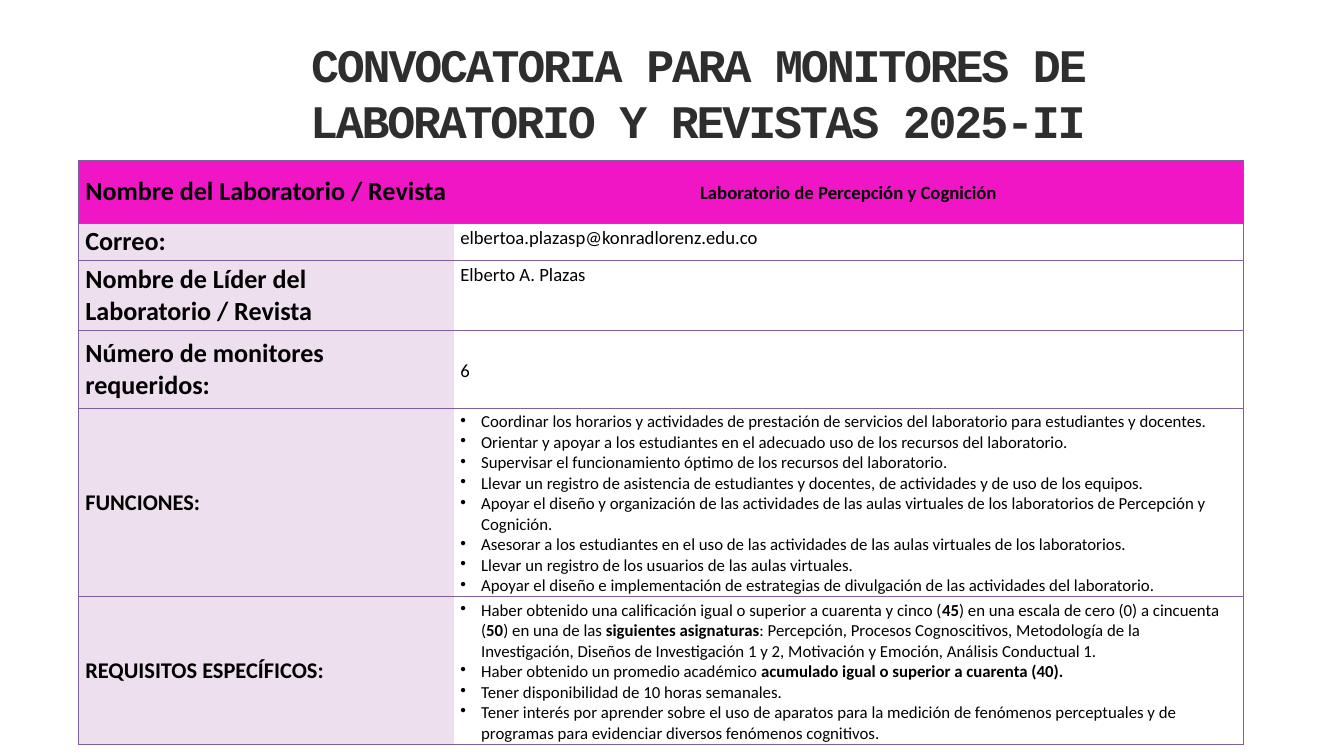
"""Build the call-for-monitors slide with its table of requirements."""
from lxml import etree
from pptx import Presentation
from pptx.dml.color import RGBColor
from pptx.enum.text import MSO_ANCHOR, PP_ALIGN
from pptx.oxml.ns import qn
from pptx.util import Inches, Pt

PINK = RGBColor(0xF0, 0x16, 0xC6)
LILAC = RGBColor(0xED, 0xDF, 0xED)
PURPLE = RGBColor(0x7D, 0x60, 0xA0)
BLACK = RGBColor(0, 0, 0)
GRAY = RGBColor(0x2E, 0x2E, 0x2E)

TITLE = "CONVOCATORIA PARA MONITORES DE LABORATORIO Y REVISTAS 2025-II"
TASKS = [
    "Coordinar los horarios y actividades de prestación de servicios del laboratorio para estudiantes y docentes.",
    "Orientar y apoyar a los estudiantes en el adecuado uso de los recursos del laboratorio.",
    "Supervisar el funcionamiento óptimo de los recursos del laboratorio.",
    "Llevar un registro de asistencia de estudiantes y docentes, de actividades y de uso de los equipos.",
    "Apoyar el diseño y organización de las actividades de las aulas virtuales de los laboratorios de Percepción y Cognición.",
    "Asesorar a los estudiantes en el uso de las actividades de las aulas virtuales de los laboratorios.",
    "Llevar un registro de los usuarios de las aulas virtuales.",
    "Apoyar el diseño e implementación de estrategias de divulgación de las actividades del laboratorio.",
]
# Text between bars is bold.
NEEDS = [
    "Haber obtenido una calificación igual o superior a cuarenta y cinco (|45|) en una escala de cero (0) a cincuenta (|50|) en una de las |siguientes asignaturas|: Percepción, Procesos Cognoscitivos, Metodología de la Investigación, Diseños de Investigación 1 y 2, Motivación y Emoción, Análisis Conductual 1.",
    "Haber obtenido un promedio académico |acumulado igual o superior a cuarenta (40).|",
    "Tener disponibilidad de 10 horas semanales.",
    "Tener interés por aprender sobre el uso de aparatos para la medición de fenómenos perceptuales y de programas para evidenciar diversos fenómenos cognitivos.",
]
ROWS = [
    (0.94, "Nombre del Laboratorio / Revista", 28, ["|Laboratorio de Percepción y Cognición|"]),
    (0.56, "Correo:", 28, ["elbertoa.plazasp@konradlorenz.edu.co"]),
    (1.04, "Nombre de Líder del Laboratorio / Revista", 28, ["Elberto A. Plazas"]),
    (1.16, "Número de monitores requeridos:", 28, ["6"]),
    (2.8, "FUNCIONES:", 24, TASKS),
    (2.2, "REQUISITOS ESPECÍFICOS:", 24, NEEDS),
]
COLS = (5.58, 11.75)


def style(para, size, color=BLACK, name="Calibri", bold=False):
    font = para.font
    font.size, font.name, font.bold = Pt(size), name, bold
    font.color.rgb = color


def bullet(para):
    props = para._p.get_or_add_pPr()
    props.set("marL", str(Inches(0.31)))
    props.set("indent", str(-Inches(0.31)))
    etree.SubElement(props, qn("a:buChar")).set("char", "•")


def border(cell, inner):
    props = cell._tc.get_or_add_tcPr()
    for pos, side in enumerate("LRTB"):
        line = etree.Element(qn("a:ln" + side), w=str(Pt(0.75)))
        if side == inner:
            etree.SubElement(line, qn("a:noFill"))
        else:
            fill = etree.SubElement(line, qn("a:solidFill"))
            etree.SubElement(fill, qn("a:srgbClr"), val=str(PURPLE))
        props.insert(pos, line)


def write(cell, lines, size, bold=False):
    frame = cell.text_frame
    for num, line in enumerate(lines):
        para = frame.add_paragraph() if num else frame.paragraphs[0]
        if len(lines) > 1:
            bullet(para)
        style(para, size, bold=bold)
        for pos, part in enumerate(line.split("|")):
            if part:
                run = para.add_run()
                run.text = part
                if pos % 2:
                    run.font.bold = True


def paint(cell, color):
    if color is None:
        cell.fill.background()
    else:
        cell.fill.solid()
        cell.fill.fore_color.rgb = color


def main():
    deck = Presentation()
    deck.slide_width, deck.slide_height = Inches(20), Inches(11.25)
    slide = deck.slides.add_slide(deck.slide_layouts[6])

    box = slide.shapes.add_textbox(Inches(3.16), Inches(0.53), Inches(14.45), Inches(2.52))
    frame = box.text_frame
    frame.word_wrap = True
    frame.margin_left = frame.margin_right = frame.margin_top = frame.margin_bottom = 0
    para = frame.paragraphs[0]
    para.alignment, para.line_spacing = PP_ALIGN.CENTER, Pt(60.1)
    style(para, 50, GRAY, "Courier New", True)
    run = para.add_run()
    run.text = TITLE
    run._r.get_or_add_rPr().set("spc", "-240")

    high = sum(row[0] for row in ROWS)
    table = slide.shapes.add_table(len(ROWS), 2, Inches(1.17), Inches(2.38),
                                   Inches(sum(COLS)), Inches(high)).table
    table.first_row = table.horz_banding = False
    for col, width in zip(table.columns, COLS):
        col.width = Inches(width)
    for num, (tall, label, size, lines) in enumerate(ROWS):
        table.rows[num].height = Inches(tall)
        left, right = table.cell(num, 0), table.cell(num, 1)
        write(left, [label], size, True)
        write(right, lines, 18 if len(lines) > 1 else 20)
        paint(left, LILAC if num else PINK)
        paint(right, None if num else PINK)
        border(left, "R")
        border(right, "L")
        left.margin_top = left.margin_bottom = Inches(0.04)
        right.margin_top, right.margin_bottom = Inches(0.05), 0
        left.vertical_anchor = MSO_ANCHOR.MIDDLE
        if num in (0, 3):
            right.vertical_anchor = MSO_ANCHOR.MIDDLE
    table.cell(0, 1).text_frame.paragraphs[0].alignment = PP_ALIGN.CENTER
    deck.save("out.pptx")


if __name__ == "__main__":
    main()
